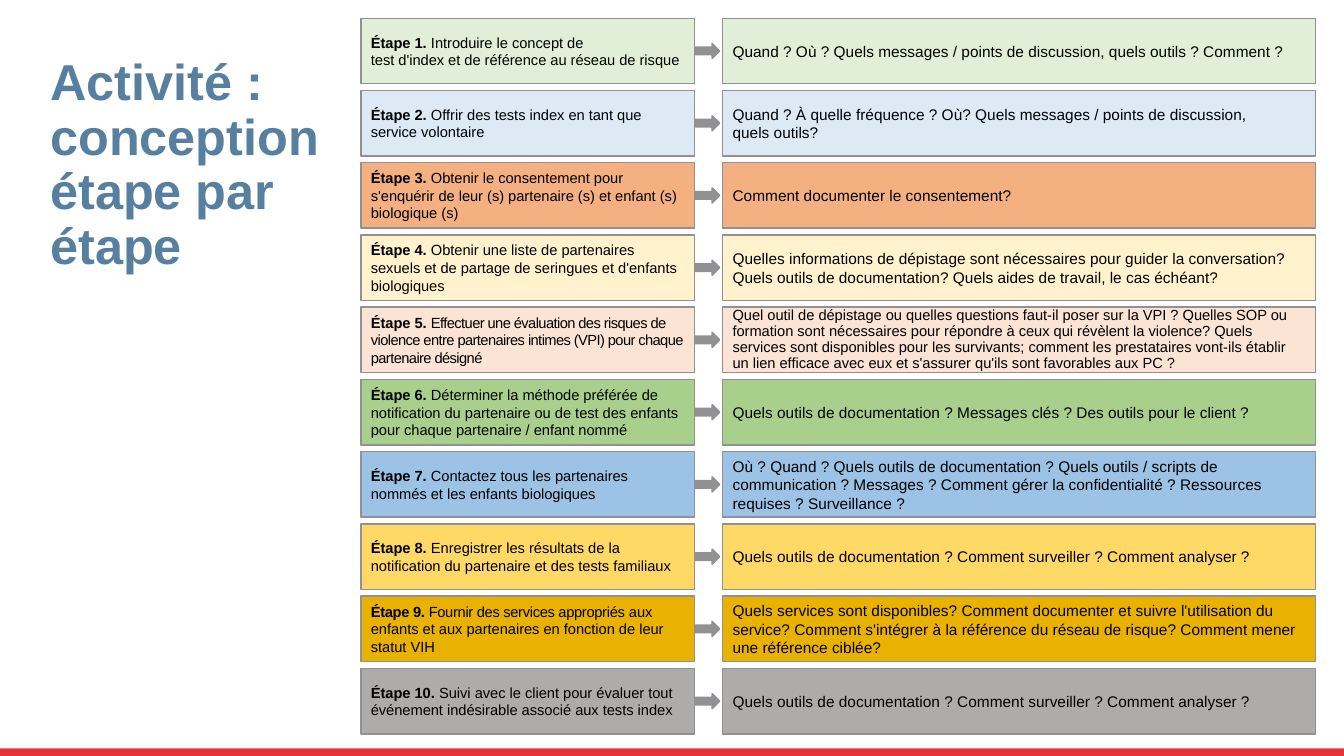
from dataclasses import dataclass

from pptx import Presentation
from pptx.dml.color import RGBColor
from pptx.enum.shapes import MSO_SHAPE
from pptx.enum.text import MSO_ANCHOR, PP_ALIGN
from pptx.util import Pt

FONT = "Arial"
GREY = "919194"
FIRST_TOP, ROW_PITCH, ROW_HEIGHT = 13, 51.6, 46.8
STEP_LEFT, STEP_WIDTH = 257.8, 238.3
QUESTION_LEFT, QUESTION_WIDTH = 516.2, 423.4
ARROW_LEFT, ARROW_WIDTH, ARROW_HEIGHT = 495.4, 18.7, 10.8


@dataclass
class Span:
    text: str
    bold: bool = False
    spacing: float = 0


@dataclass
class Step:
    colour: str
    spans: list
    question: str
    label_spacing: float = 0
    question_size: float = 11
    line_spacing: float = 1.0


STEPS = [
    Step("E1EFD8",
         [Span("Introduire le concept de \ntest d'index et de référence au réseau de risque")],
         "Quand ? Où ? Quels messages / points de discussion, quels outils ? Comment ?"),
    Step("DDEAF6",
         [Span("Offrir des tests index en tant que service volontaire")],
         "Quand ? À quelle fréquence ? Où? Quels messages / points de discussion, \n"
         "quels outils?"),
    Step("F4B081",
         [Span("Obtenir le consentement pour s'enquérir de leur (s) partenaire (s) "
               "et enfant (s) biologique (s)")],
         "Comment documenter le consentement?"),
    Step("FFF2CC",
         [Span("Obtenir une liste de partenaires sexuels et de partage de seringues "
               "et d'enfants biologiques")],
         "Quelles informations de dépistage sont nécessaires pour guider la conversation? "
         "Quels outils de documentation? Quels aides de travail, le cas échéant?"),
    Step("FBE4D4",
         [Span("Effectuer une évaluation des risques de violence entre partenaires "
               "intimes (VPI) pour chaque partenaire désigné", spacing=-0.4)],
         "Quel outil de dépistage ou quelles questions faut-il poser sur la VPI ? "
         "Quelles SOP ou formation sont nécessaires pour répondre à ceux qui révèlent "
         "la violence? Quels services sont disponibles pour les survivants; comment les "
         "prestataires vont-ils établir un lien efficace avec eux et s'assurer qu'ils "
         "sont favorables aux PC ?",
         question_size=10.5, line_spacing=0.9),
    Step("A8D08C",
         [Span("Déterminer la méthode préférée de notification du partenaire ou de test "
               "des enfants pour chaque partenaire / enfant nommé")],
         "Quels outils de documentation ? Messages clés ? Des outils pour le client ?"),
    Step("9CC2E5",
         [Span("Contactez tous les partenaires nommés et les enfants biologiques")],
         "Où ? Quand ? Quels outils de documentation ? Quels outils / scripts de "
         "communication ? Messages ? Comment gérer la confidentialité ? Ressources "
         "requises ? Surveillance ?"),
    Step("FFD966",
         [Span("Enregistrer les résultats de la notification du partenaire et des tests "
               "familiaux")],
         "Quels outils de documentation ? Comment surveiller ? Comment analyser ?"),
    Step("EAB200",
         [Span("Fournir des services appropriés ", spacing=-0.2),
          Span("aux enfants et aux partenaires en fonction de leur statut VIH")],
         "Quels services sont disponibles? Comment documenter et suivre l'utilisation du "
         "service? Comment s'intégrer à la référence du réseau de risque? Comment mener "
         "une référence ciblée?",
         label_spacing=-0.2),
    Step("AEABAB",
         [Span("Suivi avec le client pour évaluer tout événement indésirable associé aux "
               "tests index")],
         "Quels outils de documentation ? Comment surveiller ? Comment analyser ?"),
]


def colour(code):
    return RGBColor.from_string(code)


def add_spans(paragraph, spans, size, text_colour="000000"):
    """Append formatted runs; a newline in a span becomes a line break."""
    for span in spans:
        for number, line in enumerate(span.text.split("\n")):
            if number:
                paragraph.add_line_break()
            run = paragraph.add_run()
            run.text = line
            run.font.name = FONT
            run.font.size = Pt(size)
            run.font.bold = span.bold
            run.font.color.rgb = colour(text_colour)
            if span.spacing:
                run.font._element.set("spc", str(round(span.spacing * 100)))


def add_filled_shape(page, kind, left, top, width, height, fill, line=None):
    shape = page.shapes.add_shape(kind, Pt(left), Pt(top), Pt(width), Pt(height))
    shape.shadow.inherit = False
    shape.fill.solid()
    shape.fill.fore_color.rgb = colour(fill)
    if line:
        shape.line.color.rgb = colour(line)
        shape.line.width = Pt(1)
    else:
        shape.line.fill.background()
    return shape


def add_text_panel(page, left, top, width, fill, spans, size, line_spacing=1.0):
    panel = add_filled_shape(page, MSO_SHAPE.RECTANGLE, left, top, width, ROW_HEIGHT,
                             fill, GREY)
    frame = panel.text_frame
    frame.word_wrap = True
    frame.vertical_anchor = MSO_ANCHOR.MIDDLE
    paragraph = frame.paragraphs[0]
    paragraph.alignment = PP_ALIGN.LEFT
    paragraph.line_spacing = line_spacing
    add_spans(paragraph, spans, size)


def add_title(page, text):
    box = page.shapes.add_textbox(Pt(28.8), Pt(37.4), Pt(215.3), Pt(190))
    box.text_frame.word_wrap = True
    paragraph = box.text_frame.paragraphs[0]
    paragraph.line_spacing = 0.9
    add_spans(paragraph, [Span(text, bold=True)], 36, "577F9F")


def add_step_row(page, number, step):
    top = FIRST_TOP + (number - 1) * ROW_PITCH
    add_filled_shape(page, MSO_SHAPE.RIGHT_ARROW, ARROW_LEFT,
                     top + (ROW_HEIGHT - ARROW_HEIGHT) / 2, ARROW_WIDTH, ARROW_HEIGHT,
                     GREY, GREY)
    label = Span(f"Étape {number}. ", bold=True, spacing=step.label_spacing)
    add_text_panel(page, STEP_LEFT, top, STEP_WIDTH, step.colour,
                   [label, *step.spans], 10.5)
    add_text_panel(page, QUESTION_LEFT, top, QUESTION_WIDTH, step.colour,
                   [Span(step.question)], step.question_size, step.line_spacing)


def main():
    deck = Presentation()
    deck.slide_width, deck.slide_height = Pt(960), Pt(540)
    page = deck.slides.add_slide(deck.slide_layouts[6])
    add_filled_shape(page, MSO_SHAPE.RECTANGLE, 0, 534.6, 960, 5.4, "E73439")
    add_title(page, "Activité : conception étape par étape")
    for number, step in enumerate(STEPS, start=1):
        add_step_row(page, number, step)
    deck.save("out.pptx")


if __name__ == "__main__":
    main()
